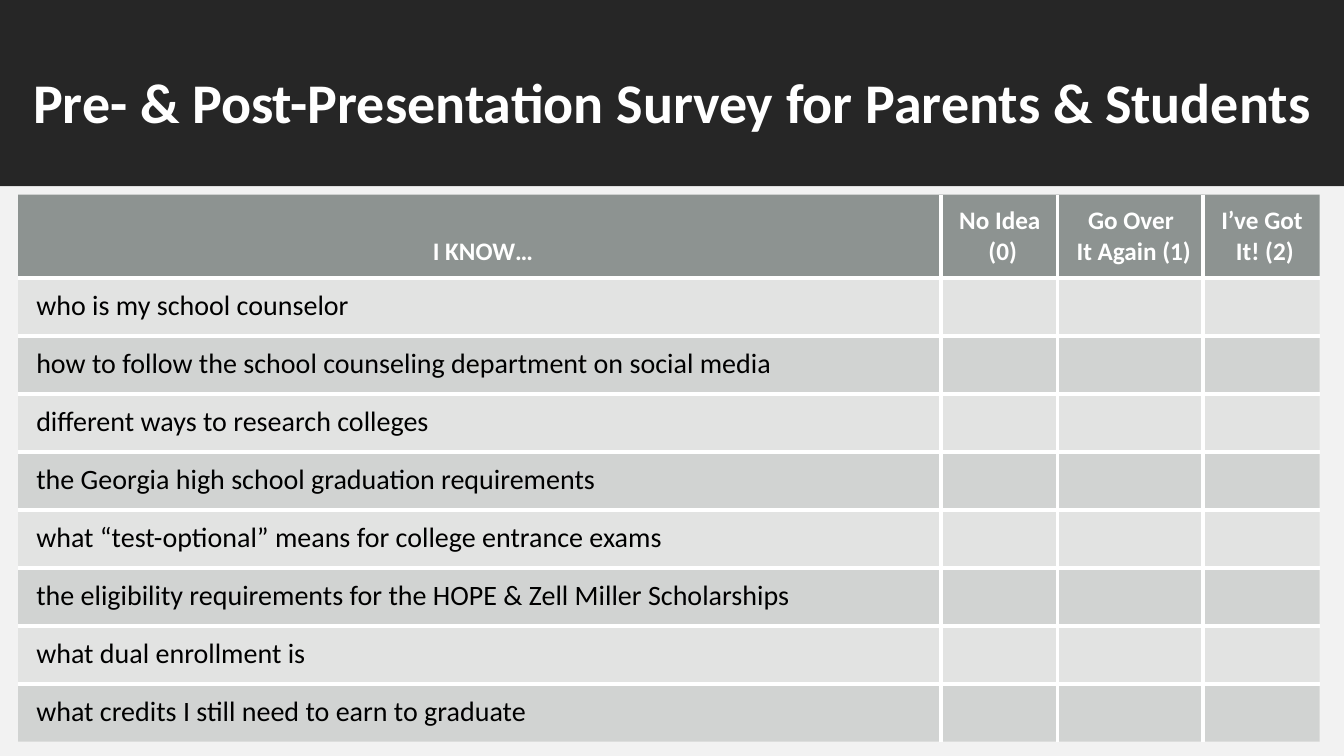
from dataclasses import dataclass

from lxml.etree import SubElement
from pptx import Presentation
from pptx.dml.color import RGBColor
from pptx.enum.shapes import MSO_SHAPE
from pptx.enum.text import MSO_ANCHOR, PP_ALIGN
from pptx.oxml.ns import qn
from pptx.slide import Slide
from pptx.table import Table, _Cell
from pptx.text.text import _Paragraph
from pptx.util import Inches, Pt

FONT = "Calibri"
WHITE = "FFFFFF"
WIDTH, HEIGHT = 13.33, 7.5
SPLIT = 1.85


@dataclass
class Band:
    top: float
    height: float
    color: str


@dataclass
class Column:
    width: float
    lines: tuple[str, ...]


@dataclass
class Tint:
    color: str
    alpha: int


BANDS = [Band(0, SPLIT, "262626"), Band(SPLIT, HEIGHT - SPLIT, "F2F2F2")]
COLUMNS = [
    Column(9.15, ("I KNOW…",)),
    Column(1.16, ("No Idea ", "(0)")),
    Column(1.44, ("Go Over ", "It Again (1)")),
    Column(1.16, ("I’ve Got ", "It! (2)")),
]
TOPICS = [
    "who is my school counselor",
    "how to follow the school counseling department on social media",
    "different ways to research colleges",
    "the Georgia high school graduation requirements",
    "what “test-optional” means for college entrance exams",
    "the eligibility requirements for the HOPE & Zell Miller Scholarships",
    "what dual enrollment is",
    "what credits I still need to earn to graduate",
]
HEAD = Tint("636B68", 70)
STRIPES = [Tint("878E8B", 15), Tint("878E8B", 30)]
TABLE_HEIGHT, HEAD_ROW = 5.43, 0.83
BODY_ROW = (TABLE_HEIGHT - HEAD_ROW) / len(TOPICS)


def to_rgb(color: str) -> RGBColor:
    return RGBColor.from_string(color)


def add_run(para: _Paragraph, text: str, size: int, color: str, bold: bool) -> None:
    run = para.add_run()
    run.text = text
    font = run.font
    font.name, font.size, font.bold = FONT, Pt(size), bold
    font.color.rgb = to_rgb(color)


def draw_band(slide: Slide, band: Band) -> None:
    shape = slide.shapes.add_shape(
        MSO_SHAPE.RECTANGLE, 0, Inches(band.top), Inches(WIDTH), Inches(band.height)
    )
    shape.shadow.inherit = False
    shape.fill.solid()
    shape.fill.fore_color.rgb = to_rgb(band.color)
    shape.line.fill.background()


def draw_title(slide: Slide) -> None:
    box = slide.shapes.add_textbox(0, Inches(0.7), Inches(WIDTH), Inches(0.98))
    box.text_frame.word_wrap = True
    para = box.text_frame.paragraphs[0]
    para.alignment = PP_ALIGN.CENTER
    para.line_spacing = 0.9
    add_run(para, "Pre- & Post-Presentation Survey for Parents & Students", 40, WHITE, True)


def style_cell(cell: _Cell, tint: Tint, edges: dict[str, bool]) -> None:
    props = cell._tc.get_or_add_tcPr()
    for side, inner in edges.items():
        line = SubElement(props, qn(f"a:ln{side}"), w=str(Pt(3)))
        if inner:
            fill = SubElement(line, qn("a:solidFill"))
            SubElement(fill, qn("a:srgbClr"), val=WHITE)
        else:
            SubElement(line, qn("a:noFill"))
    cell.fill.solid()
    cell.fill.fore_color.rgb = to_rgb(tint.color)
    shade = props.find(qn("a:solidFill")).find(qn("a:srgbClr"))
    SubElement(shade, qn("a:alpha"), val=str(tint.alpha * 1000))
    cell.margin_left = Inches(0.18)
    cell.margin_right = cell.margin_top = cell.margin_bottom = Inches(0.11)


def fill_head(table: Table) -> None:
    for col, column in enumerate(COLUMNS):
        cell = table.cell(0, col)
        cell.vertical_anchor = MSO_ANCHOR.BOTTOM
        para = cell.text_frame.paragraphs[0]
        para.alignment = PP_ALIGN.CENTER
        for index, line in enumerate(column.lines):
            if index:
                para.add_line_break()
            add_run(para, line, 18, WHITE, True)


def draw_table(slide: Slide) -> None:
    rows, cols = len(TOPICS) + 1, len(COLUMNS)
    heights = [HEAD_ROW] + [BODY_ROW] * len(TOPICS)
    width = sum(column.width for column in COLUMNS)
    table = slide.shapes.add_table(
        rows, cols, Inches(0.18), Inches(1.93), Inches(width), Inches(TABLE_HEIGHT)
    ).table
    table.first_row = table.horz_banding = False
    for col, column in enumerate(COLUMNS):
        table.columns[col].width = Inches(column.width)
    for row, height in enumerate(heights):
        table.rows[row].height = Inches(height)
        tint = STRIPES[(row - 1) % 2] if row else HEAD
        for col in range(cols):
            edges = {"L": col > 0, "R": col < cols - 1, "T": row > 0, "B": row < rows - 1}
            style_cell(table.cell(row, col), tint, edges)
    fill_head(table)
    for row, topic in enumerate(TOPICS, 1):
        para = table.cell(row, 0).text_frame.paragraphs[0]
        add_run(para, topic, 20, "000000", False)


def main() -> None:
    deck = Presentation()
    deck.slide_width, deck.slide_height = Inches(WIDTH), Inches(HEIGHT)
    slide = deck.slides.add_slide(deck.slide_layouts[6])
    for band in BANDS:
        draw_band(slide, band)
    draw_title(slide)
    draw_table(slide)
    deck.save("out.pptx")


if __name__ == "__main__":
    main()
